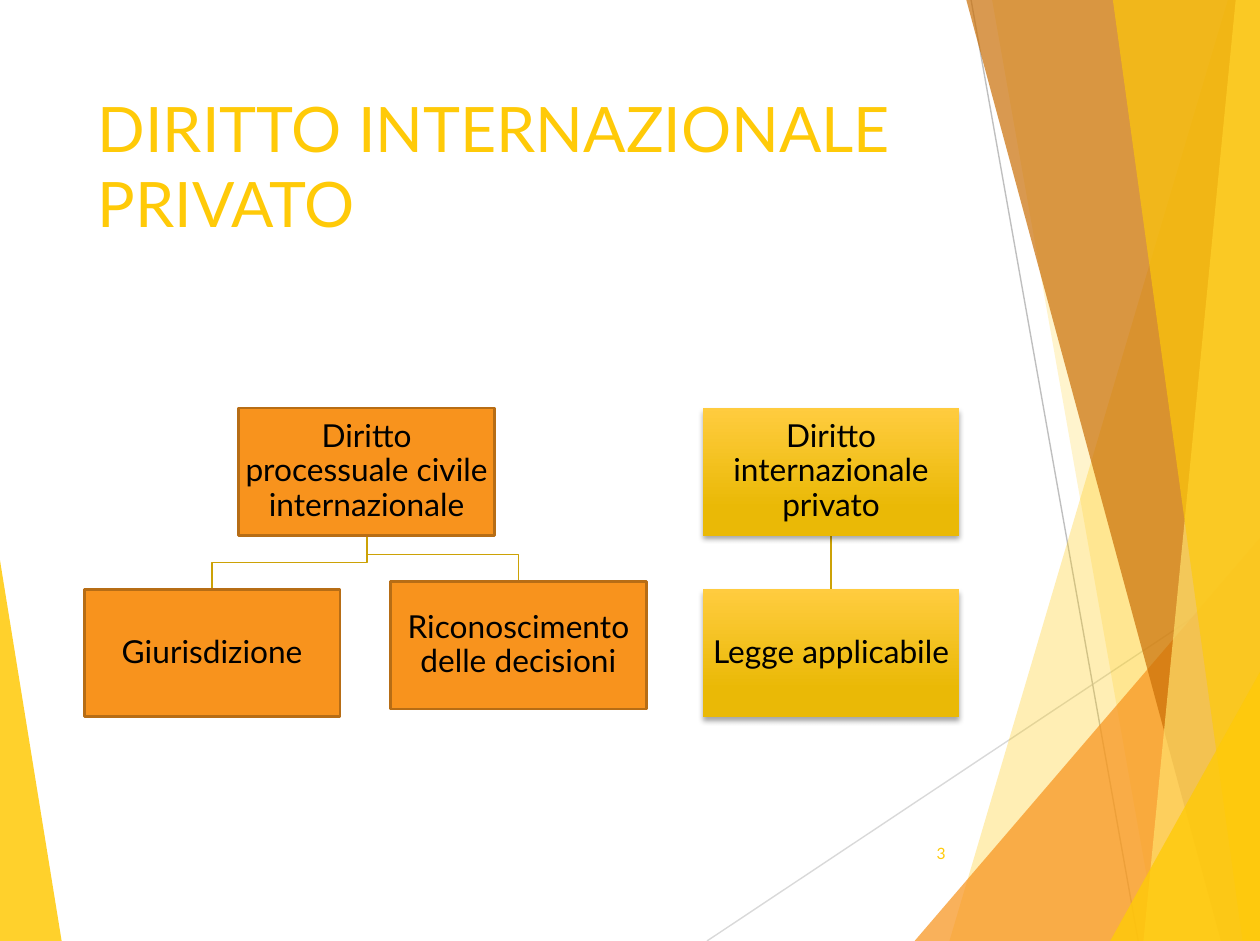
from lxml.etree import SubElement as Sub
from pptx import Presentation
from pptx.dml.color import RGBColor as RGB
from pptx.enum.shapes import MSO_CONNECTOR as Conn, MSO_SHAPE as Kind
from pptx.enum.text import MSO_ANCHOR as Anchor, MSO_AUTO_SIZE as Auto, PP_ALIGN as Align
from pptx.oxml.ns import qn
from pptx.util import Cm, Pt

HEX = {
    "gold": "FFCA08", "orange": "F8931D", "brown": "CA6F06", "pale": "FFDF6B",
    "rust": "B76D15", "branch": "CCA206", "light": "FFCC3F", "deep": "EAB906",
    "grey": "D9D9D9", "mid": "BFBFBF", "black": "000000",
}
WIDE, HIGH = 23.9, 17.85
BOX_W, BOX_H = 4.85, 2.42
TOP, LOW, RAISED = 7.74, 11.18, 11.03
DROP = 0.51  # height of a branch's last stretch, above the child box

FRAME = {"word_wrap": True, "auto_size": Auto.NONE}
TIGHT = dict.fromkeys(
    ("margin_left", "margin_right", "margin_top", "margin_bottom"), Cm(0.03))


def tint(name):
    return RGB.from_string(HEX[name])


def apply(item, form):
    for key, val in form.items():
        setattr(item, key, val)


def write(frame, text, size, color, form, para):
    apply(frame, FRAME | form)
    frame.text = text
    line = frame.paragraphs[0]
    apply(line, para)
    apply(line.font, {"name": "Lato", "size": Pt(size), "bold": False})
    line.font.color.rgb = tint(color)


def trace(slide, pts, close):
    """Outline through points given in centimetres."""
    pts = [(Cm(x), Cm(y)) for x, y in pts]
    form = slide.shapes.build_freeform(*pts[0])
    form.add_line_segments(pts[1:], close=close)
    shape = form.convert_to_shape()
    shape.shadow.inherit = False
    return shape


def panel(slide, pts, color, alpha):
    shape = trace(slide, pts, True)
    shape.line.fill.background()
    shape.fill.solid()
    shape.fill.fore_color.rgb = tint(color)
    rgb = shape.fill._xPr.find(".//" + qn("a:srgbClr"))
    Sub(rgb, qn("a:alpha"), val=str(alpha * 1000))


def stroke(line, color, width):
    line.color.rgb = tint(color)
    line.width = Pt(width)


def rule(slide, start, end, color, width):
    ends = [Cm(n) for n in (*start, *end)]
    line = slide.shapes.add_connector(Conn.STRAIGHT, *ends)
    stroke(line.line, color, width)
    Sub(line._element.spPr, qn("a:effectLst"))


def branch(slide, left, dest, top):
    """Link from the foot of a top box to the head of a lower box."""
    start = (left + BOX_W / 2, TOP + BOX_H)
    end = (dest + BOX_W / 2, top)
    if left == dest:
        rule(slide, start, end, "branch", 1)
        return
    bend = top - DROP
    link = trace(slide, [start, (start[0], bend), (end[0], bend), end], False)
    link.fill.background()
    stroke(link.line, "branch", 1)


def glow(shape):
    """Gold gradient with a soft shadow below."""
    shape.line.fill.background()
    shape.fill.gradient()
    shape.fill.gradient_angle = 270
    stops = shape.fill.gradient_stops
    for stop, color, place in zip(stops, ("light", "deep"), (0, 0.78)):
        stop.color.rgb = tint(color)
        stop.position = place
    fx = shape._element.spPr.find(qn("a:effectLst"))
    shade = Sub(fx, qn("a:outerShdw"), blurRad=str(Pt(3)), dist=str(Pt(2)),
                dir="5400000", rotWithShape="0")
    rgb = Sub(shade, qn("a:srgbClr"), val=HEX["black"])
    Sub(rgb, qn("a:alpha"), val="35000")


def box(slide, left, top, text, gold):
    shape = slide.shapes.add_shape(
        Kind.RECTANGLE, Cm(left), Cm(top), Cm(BOX_W), Cm(BOX_H))
    shape.shadow.inherit = False
    if gold:
        glow(shape)
    else:
        shape.fill.solid()
        shape.fill.fore_color.rgb = tint("orange")
        stroke(shape.line, "rust", 1.5)
    write(shape.text_frame, text, 17, "black",
          TIGHT | {"vertical_anchor": Anchor.MIDDLE},
          {"alignment": Align.CENTER, "line_spacing": 0.9})


def decor(slide):
    panel(slide, [(-0.03, 10.44), (1.17, HIGH), (-0.03, HIGH)], "gold", 85)
    rule(slide, (13.41, HIGH), (WIDE, 10.87), "grey", 0.75)
    rule(slide, (18.42, 0), (21.59, HIGH), "mid", 0.75)
    # Bands run from top to foot, wedges from the foot to the right edge
    for kind, head, foot, color, alpha in (
        ("band", 23.29, 18.01, "gold", 30),
        ("band", 18.82, 21.97, "gold", 20),
        ("wedge", 10.21, 17.35, "orange", 72),
        ("band", 18.33, 23.16, "brown", 70),
        ("band", 23.44, 21.69, "pale", 70),
        ("band", 21.11, 23.57, "gold", 65),
        ("wedge", 12.75, 21.06, "gold", 80),
    ):
        edge = [(head, 0), (WIDE, 0)] if kind == "band" else [(WIDE, head)]
        panel(slide, [(foot, HIGH), *edge, (WIDE, HIGH)], color, alpha)


def main():
    deck = Presentation()
    apply(deck, {"slide_width": Cm(WIDE), "slide_height": Cm(HIGH)})
    slide = deck.slides.add_slide(deck.slide_layouts[5])
    decor(slide)

    # Title
    title = slide.shapes.title
    apply(title, {"left": Cm(1.6), "top": Cm(1.58),
                  "width": Cm(16.59), "height": Cm(3.43)})
    write(title.text_frame, "DIRITTO INTERNAZIONALE PRIVATO", 33.7, "gold",
          {"vertical_anchor": Anchor.TOP}, {"alignment": Align.LEFT})

    # Trees: top box, then the boxes below it
    trees = (
        (4.53, "Diritto processuale civile internazionale", False, (
            (7.41, RAISED, "Riconoscimento delle decisioni"),
            (1.6, LOW, "Giurisdizione"))),
        (13.34, "Diritto internazionale privato", True, (
            (13.34, LOW, "Legge applicabile"),)),
    )
    for left, text, gold, kids in trees:
        for dest, top, _ in kids:
            branch(slide, left, dest, top)
        box(slide, left, TOP, text, gold)
        for dest, top, label in kids:
            box(slide, dest, top, label, gold)

    # Slide number
    num = slide.shapes.add_textbox(Cm(16.84), Cm(15.72), Cm(1.35), Cm(0.94))
    write(num.text_frame, "3", 8.4, "gold",
          {"vertical_anchor": Anchor.MIDDLE}, {"alignment": Align.RIGHT})
    deck.save("out.pptx")


if __name__ == "__main__":
    main()
